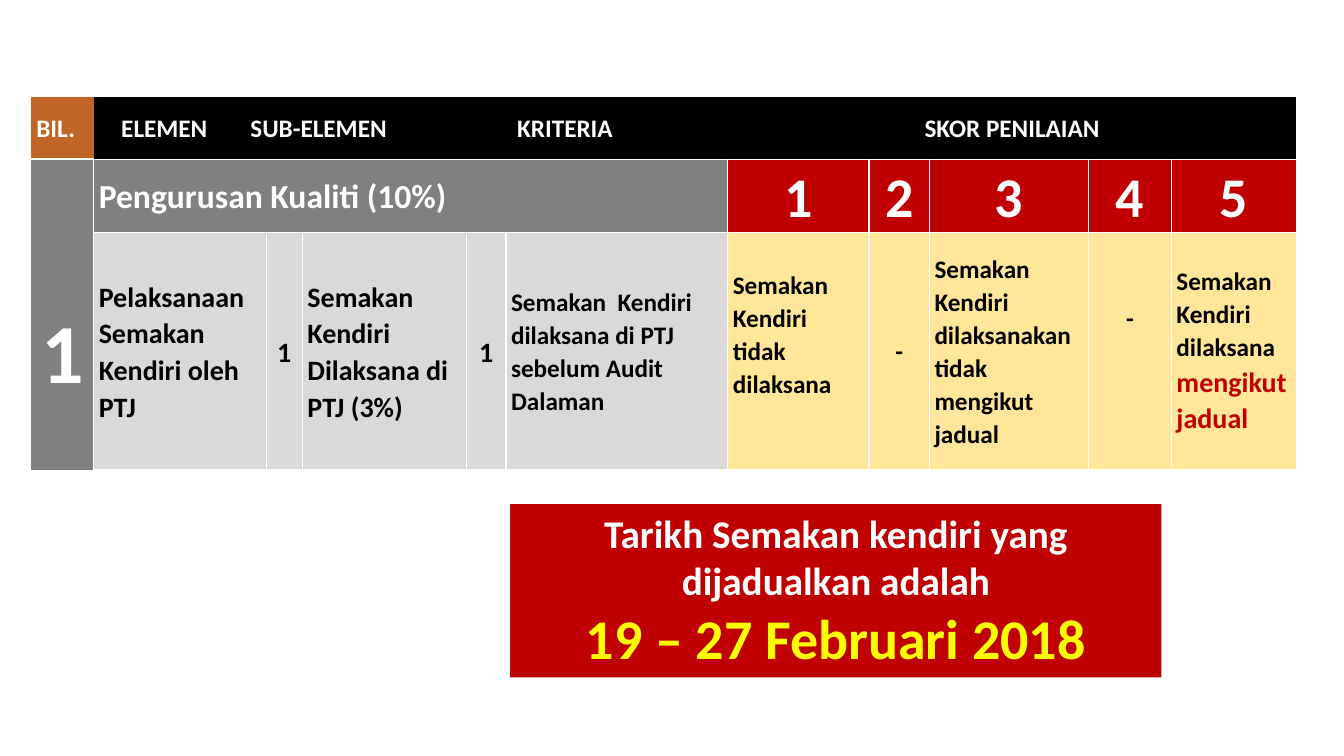
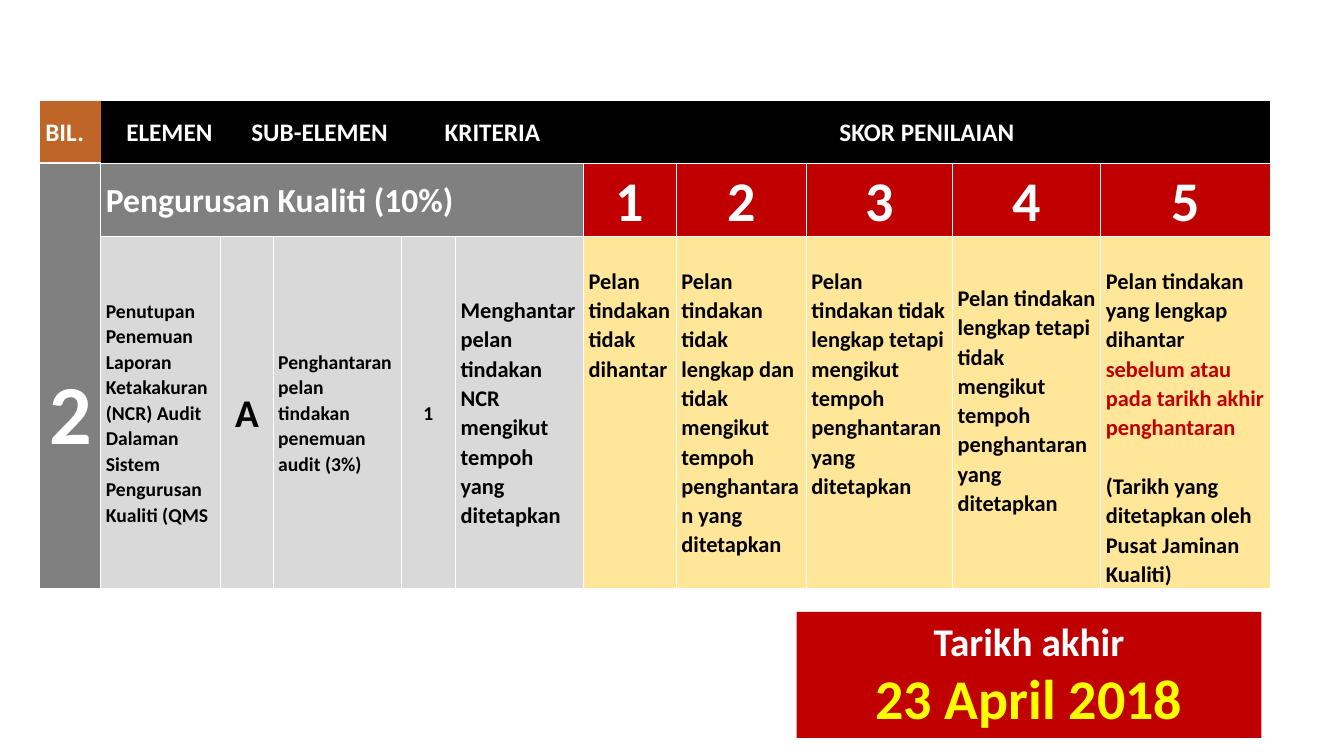
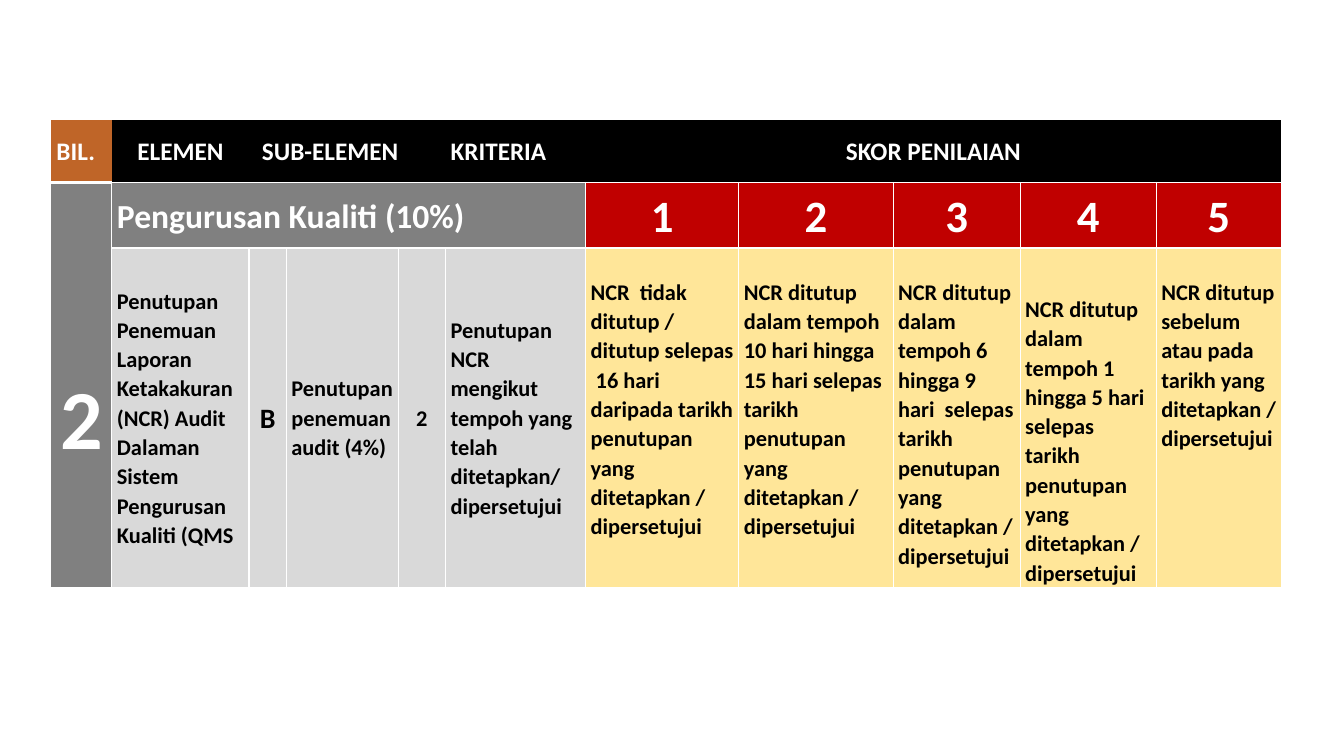
"""Builds three scoring tables for the quality management element."""
from lxml import etree
from pptx import Presentation
from pptx.dml.color import RGBColor
from pptx.enum.shapes import MSO_SHAPE
from pptx.enum.text import MSO_ANCHOR, PP_ALIGN
from pptx.oxml.ns import qn
from pptx.util import Inches, Pt

RECTANGLE = MSO_SHAPE.RECTANGLE
TOP, MIDDLE, BOTTOM = MSO_ANCHOR.TOP, MSO_ANCHOR.MIDDLE, MSO_ANCHOR.BOTTOM
LEFT, CENTER = PP_ALIGN.LEFT, PP_ALIGN.CENTER

COLORS = {
    "white": "FFFFFF",
    "black": "000000",
    "orange": "BF6528",
    "gray": "808080",
    "silver": "D9D9D9",
    "red": "C00000",
    "cream": "FFE699",
    "yellow": "FFFF00",
}
FONT = "Calibri"
PLAIN_TABLE = "{2D5ABB26-0587-4C30-8999-92F81FD0307C}"
LABELS = ["BIL.", "ELEMEN", "SUB-ELEMEN", "KRITERIA", "SKOR PENILAIAN"]
TITLE = "Pengurusan Kualiti (10%)"
SIDES = "LRTB"
LINE_SPACING = 1.07
LINE_16, LINE_18 = 0.29, 0.33


def rgb(name):
    """Return the named colour."""
    return RGBColor.from_string(COLORS[name])


def write(frame, paragraphs, size=18, color="black", align=LEFT, spacing=1.0, gap=0):
    """Write paragraphs, each a string or a list of (text, overrides) runs."""
    if isinstance(paragraphs, str):
        paragraphs = [paragraphs]
    for index, runs in enumerate(paragraphs):
        para = frame.paragraphs[0] if index == 0 else frame.add_paragraph()
        para.alignment = align
        para.line_spacing = spacing
        if index and gap:
            para.space_before = Pt(gap)
        if isinstance(runs, str):
            runs = [(runs, {})]
        for text, overrides in runs:
            span = para.add_run()
            span.text = text
            span.font.name = FONT
            span.font.bold = True
            span.font.size = Pt(overrides.get("size", size))
            span.font.color.rgb = rgb(overrides.get("color", color))


def entry(text, span=1, anchor=MIDDLE, top=0, bottom=0, **style):
    """Describe one cell of a scoring row."""
    return {"text": text, "span": span, "anchor": anchor,
            "top": top, "bottom": bottom, **style}


def score(text, top=LINE_16, **style):
    """Describe a score cell whose text starts below the top edge."""
    return entry(text, anchor=TOP, top=top, size=16, **style)


class ScoreDeck:
    """Holds the presentation, its style and the current slide."""

    def __init__(self):
        """Start an empty widescreen deck."""
        self.deck = Presentation()
        self.deck.slide_width = Inches(13.33)
        self.deck.slide_height = Inches(7.5)
        self.page = None

    def add_page(self):
        """Start a blank slide."""
        self.page = self.deck.slides.add_slide(self.deck.slide_layouts[6])

    def border(self, cell, sides, width=1):
        """Draw white lines on the given sides of a cell."""
        properties = cell._tc.get_or_add_tcPr()
        for side in sides:
            line = etree.SubElement(properties, qn(f"a:ln{side}"), w=str(Pt(width)))
            fill = etree.SubElement(line, qn("a:solidFill"))
            etree.SubElement(fill, qn("a:srgbClr"), val=COLORS["white"])

    def cell(self, table, row, column, fill, text="", span=1, sides=SIDES, width=1,
             anchor=MIDDLE, top=0, bottom=0, **style):
        """Fill one cell, merged over its span, and return the next column."""
        cell = table.cell(row, column)
        if span > 1:
            cell.merge(table.cell(row, column + span - 1))
        self.border(cell, sides, width)
        cell.fill.solid()
        cell.fill.fore_color.rgb = rgb(fill)
        cell.vertical_anchor = anchor
        cell.margin_left = cell.margin_right = Inches(0.05)
        cell.margin_top, cell.margin_bottom = Inches(top), Inches(bottom)
        if text:
            write(cell.text_frame, text, spacing=LINE_SPACING, **style)
        return column + span

    def score_table(self, left, top, columns, heights, header, number, details, scores,
                    score_size=40):
        """Add a table with a label row, a score row and a detail row."""
        frame = self.page.shapes.add_table(
            len(heights), len(columns), Inches(left), Inches(top),
            Inches(sum(columns)), Inches(sum(heights)))
        table = frame.table
        table.first_row = table.horz_banding = False
        table._tbl.tblPr.find(qn("a:tableStyleId")).text = PLAIN_TABLE
        for column, width in zip(table.columns, columns):
            column.width = Inches(width)
        for row, height in zip(table.rows, heights):
            row.height = Inches(height)

        column = 0
        for label, span in zip(LABELS, header):
            first = column == 0
            column = self.cell(
                table, 0, column, "orange" if first else "black", label, span,
                sides="B", width=2 if first else 1,
                align=LEFT if first else CENTER, color="white")

        column = self.cell(table, 1, 0, "gray", sides="R")
        column = self.cell(table, 1, column, "gray", TITLE, sum(header[1:4]),
                           size=24, color="white")
        for value in range(1, len(scores) + 1):
            column = self.cell(table, 1, column, "red", str(value),
                               size=score_size, color="white", align=CENTER)

        column = self.cell(table, 2, 0, "gray", number, sides="R",
                           size=60, color="white", align=CENTER)
        for fill, entries in (("silver", details), ("cream", scores)):
            for item in entries:
                column = self.cell(table, 2, column, fill, **item)

    def date_box(self, left, top, width, height, caption, date):
        """Add a red box with a caption and a highlighted date."""
        box = self.page.shapes.add_shape(
            RECTANGLE, Inches(left), Inches(top), Inches(width), Inches(height))
        box.shadow.inherit = False
        box.fill.solid()
        box.fill.fore_color.rgb = rgb("red")
        box.line.fill.background()
        box.text_frame.word_wrap = True
        box.text_frame.vertical_anchor = TOP
        write(box.text_frame, [caption, [(date, {"size": 40, "color": "yellow"})]],
              size=28, color="white", align=CENTER)


NCR_ELEMENT = ("Penutupan Penemuan Laporan Ketakakuran (NCR) Audit Dalaman "
               "Sistem Pengurusan Kualiti (QMS")


def self_check(sheet):
    """Build the self-check slide."""
    sheet.add_page()
    sheet.score_table(
        0.31, 0.96,
        [0.62, 1.4, 0.31, 0.36, 0.99, 0.64, 0.39, 2.2, 1.4, 0.6, 1.58, 0.82, 1.24],
        [0.62, 0.73, 2.35], [1, 1, 3, 3, 5], "1",
        [
            entry("Pelaksanaan Semakan Kendiri oleh PTJ", span=2, size=20),
            entry("1", size=20, align=CENTER),
            entry("Semakan Kendiri Dilaksana di PTJ (3%)", span=2, size=20),
            entry("1", size=20, align=CENTER),
            entry("Semakan  Kendiri dilaksana di PTJ sebelum Audit Dalaman"),
        ],
        [
            entry("Semakan Kendiri tidak dilaksana", bottom=LINE_18),
            entry("-", align=CENTER),
            entry("Semakan Kendiri dilaksanakan tidak mengikut jadual"),
            entry("-", align=CENTER, bottom=2 * LINE_18),
            entry([[("Semakan Kendiri dilaksana ", {}),
                    ("mengikut jadual", {"size": 20, "color": "red"})]],
                  anchor=BOTTOM, bottom=LINE_18),
        ])
    sheet.date_box(5.06, 5, 6.46, 1.72,
                   "Tarikh Semakan kendiri yang dijadualkan adalah",
                   "19 – 27 Februari 2018")


def action_plan(sheet):
    """Build the action plan slide."""
    sheet.add_page()
    sheet.score_table(
        0.4, 1,
        [0.6, 1.19, 0.17, 0.35, 1.27, 0.54, 1.27, 0.92, 1.29, 1.45, 1.47, 1.68],
        [0.62, 0.73, 3.48], [1, 2, 2, 2, 5], "2",
        [
            entry(NCR_ELEMENT, size=14),
            entry("A", span=2, size=28, align=CENTER),
            entry("Penghantaran pelan tindakan penemuan audit (3%)", size=14),
            entry("1", size=14, align=CENTER),
            entry("Menghantar pelan tindakan NCR mengikut tempoh yang ditetapkan",
                  size=16),
        ],
        [
            score("Pelan tindakan tidak dihantar"),
            score("Pelan tindakan tidak lengkap dan tidak mengikut tempoh "
                  "penghantaran yang ditetapkan"),
            score("Pelan tindakan tidak lengkap tetapi mengikut tempoh "
                  "penghantaran yang ditetapkan"),
            score("Pelan tindakan lengkap tetapi tidak mengikut tempoh "
                  "penghantaran yang ditetapkan", top=0.46),
            score([[("Pelan tindakan yang lengkap dihantar ", {}),
                    ("sebelum atau pada tarikh akhir penghantaran", {"color": "red"})],
                   "(Tarikh yang ditetapkan oleh Pusat Jaminan Kualiti)"], gap=21),
        ])
    sheet.date_box(7.9, 6.07, 4.61, 1.25, "Tarikh akhir", "23 April 2018")


def audit_closure(sheet):
    """Build the audit closure slide."""
    sheet.add_page()
    sheet.score_table(
        0.51, 1.19,
        [0.6, 1.36, 0.37, 1.11, 0.13, 0.34, 1.39, 1.52, 1.53, 1.26, 1.35, 1.24],
        [0.62, 0.65, 3.36], [1, 1, 3, 2, 5], "2",
        [
            entry(NCR_ELEMENT, size=16),
            entry("B", size=20, align=CENTER),
            entry("Penutupan penemuan audit (4%)", size=16),
            entry("2", span=2, size=16, align=CENTER),
            entry(["Penutupan NCR mengikut tempoh yang telah ditetapkan/",
                   "dipersetujui"], size=16),
        ],
        [
            score("NCR  tidak ditutup / ditutup selepas  16 hari daripada tarikh "
                  "penutupan yang ditetapkan / dipersetujui"),
            score("NCR ditutup dalam tempoh 10 hari hingga 15 hari selepas tarikh "
                  "penutupan yang ditetapkan / dipersetujui"),
            score("NCR ditutup dalam tempoh 6 hingga 9 hari  selepas tarikh "
                  "penutupan yang ditetapkan / dipersetujui"),
            score("NCR ditutup dalam tempoh 1 hingga 5 hari selepas tarikh "
                  "penutupan yang ditetapkan / dipersetujui", top=0.46),
            score("NCR ditutup sebelum atau pada tarikh yang ditetapkan / "
                  "dipersetujui"),
        ],
        score_size=32)


def main():
    """Build and save the deck."""
    sheet = ScoreDeck()
    for build in (self_check, action_plan, audit_closure):
        build(sheet)
    sheet.deck.save("out.pptx")


if __name__ == "__main__":
    main()
